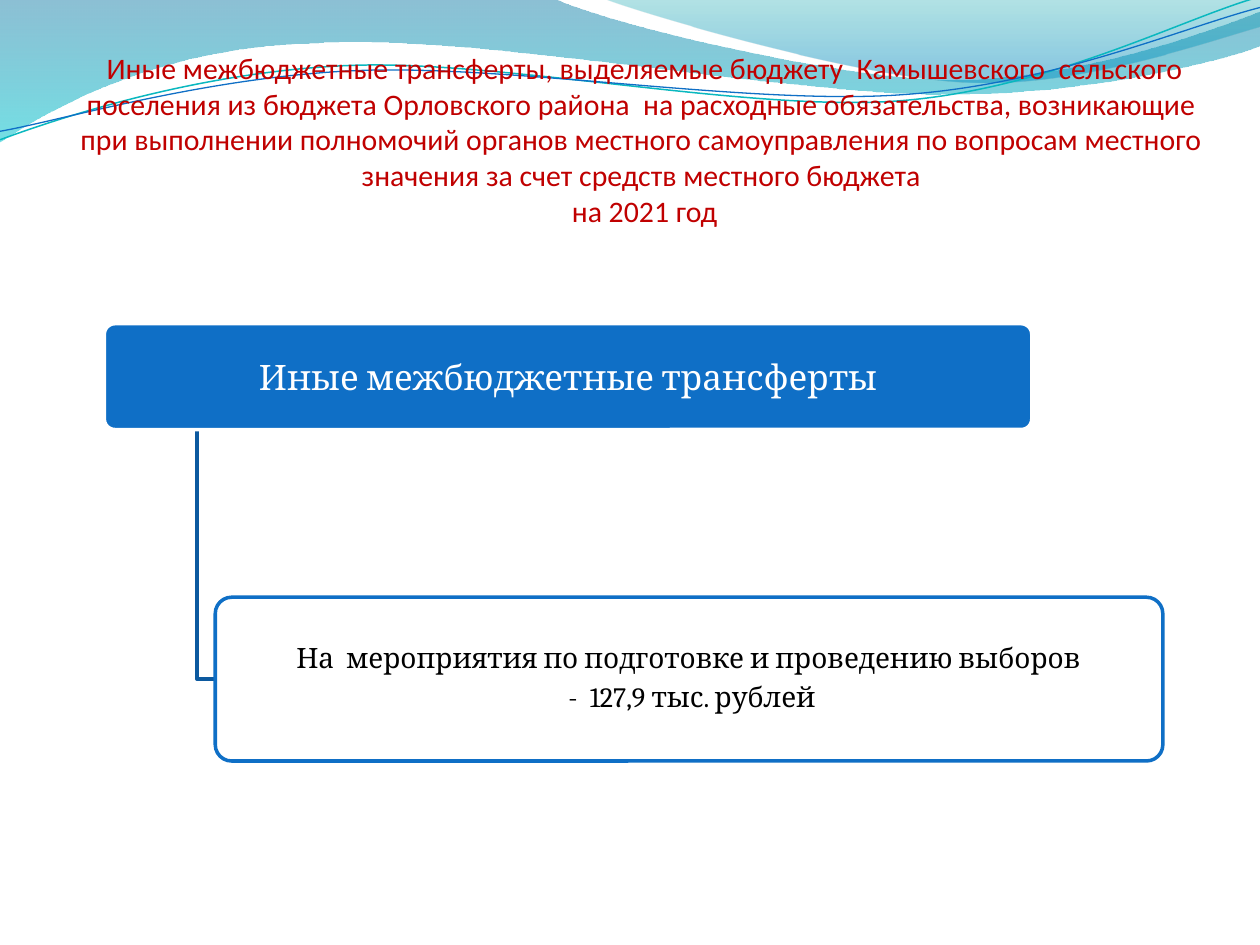
from lxml.etree import SubElement
from pptx import Presentation
from pptx.dml.color import RGBColor
from pptx.enum.shapes import MSO_SHAPE as Shape
from pptx.enum.text import MSO_ANCHOR as Anchor, PP_ALIGN as Align
from pptx.oxml.ns import qn
from pptx.util import Pt

COLORS = {
    "title": "C00000", "blue": "0F6FC6", "branch": "0C599F", "teal": "0AB8BF",
    "white": "FFFFFF", "black": "000000", "wave_top": "0074A1",
    "wave_bottom": "00C6CF", "crest_top": "00A1A9", "crest_bottom": "008BBF",
}

presentation = Presentation()
presentation.slide_width = Pt(720)
presentation.slide_height = Pt(540)
slide = presentation.slides.add_slide(presentation.slide_layouts[6])


def color(name):
    return RGBColor.from_string(COLORS[name])


def draw_path(start, segments, close=False):
    builder = slide.shapes.build_freeform(*map(Pt, start))
    ends = [tuple(map(Pt, segment[-2:])) for segment in segments]
    builder.add_line_segments(ends, close=close)
    shape = builder.convert_to_shape()
    shape.shadow.inherit = False
    steps = list(shape.element.iter(qn("a:lnTo")))
    for step, segment in zip(steps, segments):
        if len(segment) == 6:
            curve = step.makeelement(qn("a:cubicBezTo"))
            for x, y in zip(segment[::2], segment[1::2]):
                SubElement(curve, qn("a:pt"), x=str(Pt(x) - shape.left),
                           y=str(Pt(y) - shape.top))
            step.getparent().replace(step, curve)
    return shape


waves = [
    ((-0.7, -0.7), [
        (316.8, -0.7),
        (342.7, 12.2, 478.1, 45.4, 545.8, 45.4),
        (614.2, 45.4, 689.8, 18.7, 720, 6.5),
        (720.7, 25.9),
        (707.8, 31.7, 626.4, 54.7, 537.1, 54),
        (447.8, 54, 275, 20.2, 185, 24.5),
        (92.9, 25.9, 33.1, 59.8, -0.7, 81.4),
    ], [("wave_top", 0, 45), ("wave_bottom", 1, 55)]),
    ((344.9, -0.7), [
        (366.5, 7.9, 491, 44.6, 553.7, 46.8),
        (616.3, 49.7, 691.9, 23, 720, 15.1),
        (720, 0),
    ], [("crest_top", 0, 30), ("crest_bottom", 0.8, 45)]),
]
for start, segments, stops in waves:
    wave = draw_path(start, segments, close=True)
    wave.line.fill.background()
    wave.fill.gradient()
    wave.fill.gradient_angle = 270
    for stop, (name, position, _) in zip(wave.fill.gradient_stops, stops):
        stop.color.rgb = color(name)
        stop.position = position
    gradient = wave.element.spPr.find(qn("a:gradFill"))
    for element, (_, _, opacity) in zip(gradient.iter(qn("a:srgbClr")), stops):
        SubElement(element, qn("a:alpha"), val=str(opacity * 1000))

lines = [
    ((-1.4, 62.9), [
        (33.8, 51.7, 114.1, 29.4, 199.8, 29.9),
        (284.8, 30.3, 425.8, 67.3, 512.4, 64.9),
        (599, 62.4, 676.4, 25.7, 720.2, 15.5),
    ], "teal", 0.85, 357.3),
    ((-1.1, 58), [
        (32.9, 53.8, 118.3, 32.5, 204.1, 33),
        (290.6, 33.4, 428.9, 63.8, 515.5, 61.4),
        (601.3, 59.6, 678.4, 30.1, 721.4, 21.3),
    ], "blue", 0.75, 357.3),
    ((112.5, 245), [(112.5, 388), (123, 388)], "branch", 2, 0),
]
for start, segments, name, width, rotation in lines:
    line = draw_path(start, segments)
    line.rotation = rotation
    line.fill.background()
    line.line.color.rgb = color(name)
    line.line.width = Pt(width)

title = slide.shapes.add_textbox(Pt(42.5), Pt(2.4), Pt(648), Pt(128))
frame = title.text_frame
frame.word_wrap = True
frame.vertical_anchor = Anchor.BOTTOM
frame.margin_left = frame.margin_right = frame.margin_bottom = 0
frame.margin_top = Pt(3)
frame.text = (
    " Иные межбюджетные трансферты, выделяемые бюджету  Камышевского  сельского "
    "поселения из бюджета Орловского района  на расходные обязательства, "
    "возникающие при выполнении полномочий органов местного самоуправления по "
    "вопросам местного значения за счет средств местного бюджета\v на 2021 год"
)
paragraph = frame.paragraphs[0]
paragraph.alignment = Align.CENTER
paragraph.font.size = Pt(17)
paragraph.font.name = "Calibri"
paragraph.font.color.rgb = color("title")

boxes = [
    ((59.6, 185, 530, 60.5), "blue", 100, "white", "white", 20, 6,
     ["Иные межбюджетные трансферты"]),
    ((123, 341.3, 541.5, 93.6), "white", 90, "blue", "black", 16, 3.6,
     ["На  мероприятия по подготовке и проведению выборов",
      " -  127,9 тыс. рублей"]),
]
for bounds, fill, opacity, outline, ink, size, margin, texts in boxes:
    box = slide.shapes.add_shape(Shape.ROUNDED_RECTANGLE, *map(Pt, bounds))
    box.adjustments[0] = 0.1
    box.shadow.inherit = False
    box.fill.solid()
    box.fill.fore_color.rgb = color(fill)
    fill_color = box.element.spPr.find(qn("a:solidFill")).find(qn("a:srgbClr"))
    SubElement(fill_color, qn("a:alpha"), val=str(opacity * 1000))
    box.line.color.rgb = color(outline)
    box.line.width = Pt(2)
    frame = box.text_frame
    frame.word_wrap = True
    frame.vertical_anchor = Anchor.MIDDLE
    frame.margin_top = Pt(margin)
    frame.text = "\n".join(texts)
    for paragraph in frame.paragraphs:
        paragraph.alignment = Align.CENTER
        paragraph.line_spacing = 0.9
        paragraph.font.size = Pt(size)
        paragraph.font.name = "Cambria"
        paragraph.font.color.rgb = color(ink)
    for paragraph in frame.paragraphs[:-1]:
        paragraph.space_after = Pt(5)

presentation.save("out.pptx")
